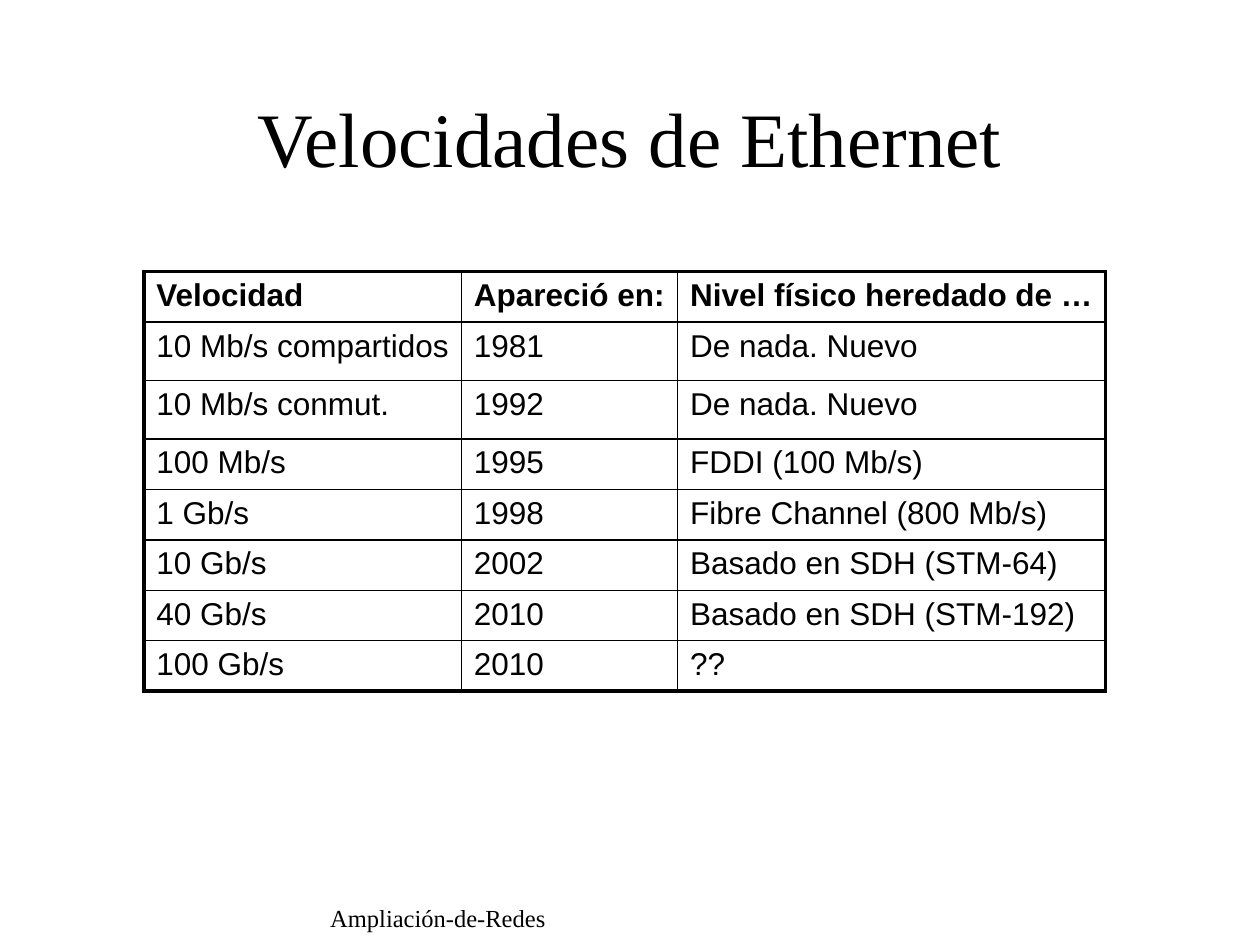
import pptx
import pptx.util
import pptx.dml.color
import pptx.enum.text
from lxml import etree

Pt = pptx.util.Pt
BLACK = pptx.dml.color.RGBColor(0, 0, 0)
WHITE = pptx.dml.color.RGBColor(255, 255, 255)

# Content
TITLE = "Velocidades de Ethernet"
FOOTER = "Ampliación-de-Redes"
ROWS = [
    ("Velocidad", "Apareció en:", "Nivel físico heredado de …"),
    ("10 Mb/s compartidos", "1981", "De nada. Nuevo"),
    ("10 Mb/s conmut.", "1992", "De nada. Nuevo"),
    ("100 Mb/s", "1995", "FDDI (100 Mb/s)"),
    ("1 Gb/s", "1998", "Fibre Channel (800 Mb/s)"),
    ("10 Gb/s", "2002", "Basado en SDH (STM-64)"),
    ("40 Gb/s", "2010", "Basado en SDH (STM-192)"),
    ("100 Gb/s", "2010", "??"),
]

# Layout and formats
COL_WIDTHS = [181.4, 123.6, 244.6]
ROW_HEIGHTS = [28.8, 33.2, 33.6] + [28.8] * 5
TABLE_LEFT, TABLE_TOP = 82.2, 155.3
THIN, THICK = 1, 2.25
TITLE_FONT = {"name": "Times New Roman", "size": Pt(44), "bold": False}
FOOTER_FONT = {"name": "Times New Roman", "size": Pt(14)}
HEAD_FONT = {"name": "Arial", "size": Pt(18), "bold": True}
BODY_FONT = {**HEAD_FONT, "bold": False}


def write(tf, text, font):
    p = tf.paragraphs[0]
    r = p.add_run()
    r.text = text
    for key, value in font.items():
        setattr(r.font, key, value)
    r.font.color.rgb = BLACK
    return p


def set_borders(cell, widths):
    """Draw the left, right, top and bottom borders, in that order."""
    tc_pr = cell._tc.get_or_add_tcPr()
    ns = pptx.oxml.ns.nsdecls("a")
    for i, (side, width) in enumerate(zip("LRTB", widths)):
        tc_pr.insert(i, etree.fromstring(
            f'<a:ln{side} {ns} w="{int(Pt(width))}"><a:solidFill>'
            f'<a:srgbClr val="{BLACK}"/></a:solidFill></a:ln{side}>'))


prs = pptx.Presentation()
prs.slide_width, prs.slide_height = Pt(720), Pt(540)
s = prs.slides.add_slide(prs.slide_layouts[5])
s.background.fill.solid()
s.background.fill.fore_color.rgb = WHITE

# Title
title = s.shapes.title
title.left, title.top, title.width, title.height = Pt(54), Pt(48), Pt(612), Pt(90)
tf = title.text_frame
tf.auto_size = pptx.enum.text.MSO_AUTO_SIZE.NONE
tf.vertical_anchor = pptx.enum.text.MSO_ANCHOR.TOP
write(tf, TITLE, TITLE_FONT).alignment = pptx.enum.text.PP_ALIGN.CENTER

# Table of speeds
last_row, last_col = len(ROWS) - 1, len(COL_WIDTHS) - 1
table = s.shapes.add_table(
    len(ROWS), len(COL_WIDTHS), Pt(TABLE_LEFT), Pt(TABLE_TOP),
    Pt(sum(COL_WIDTHS)), Pt(sum(ROW_HEIGHTS))).table
table.first_row = table.horz_banding = False
for column, width in zip(table.columns, COL_WIDTHS):
    column.width = Pt(width)
for i, (texts, height) in enumerate(zip(ROWS, ROW_HEIGHTS)):
    table.rows[i].height = Pt(height)
    for j, text in enumerate(texts):
        cell = table.cell(i, j)
        cell.fill.background()
        cell.margin_right = Pt(3.6)  # keeps each entry on one line
        write(cell.text_frame, text, BODY_FONT if i else HEAD_FONT)
        outer = (j == 0, j == last_col, i == 0, i == last_row)
        set_borders(cell, [THICK if edge else THIN for edge in outer])

# Footer
box = s.shapes.add_textbox(Pt(181.6), Pt(512.6), Pt(139), Pt(24.5))
box.text_frame.word_wrap = False
write(box.text_frame, FOOTER, FOOTER_FONT)

prs.save("out.pptx")
